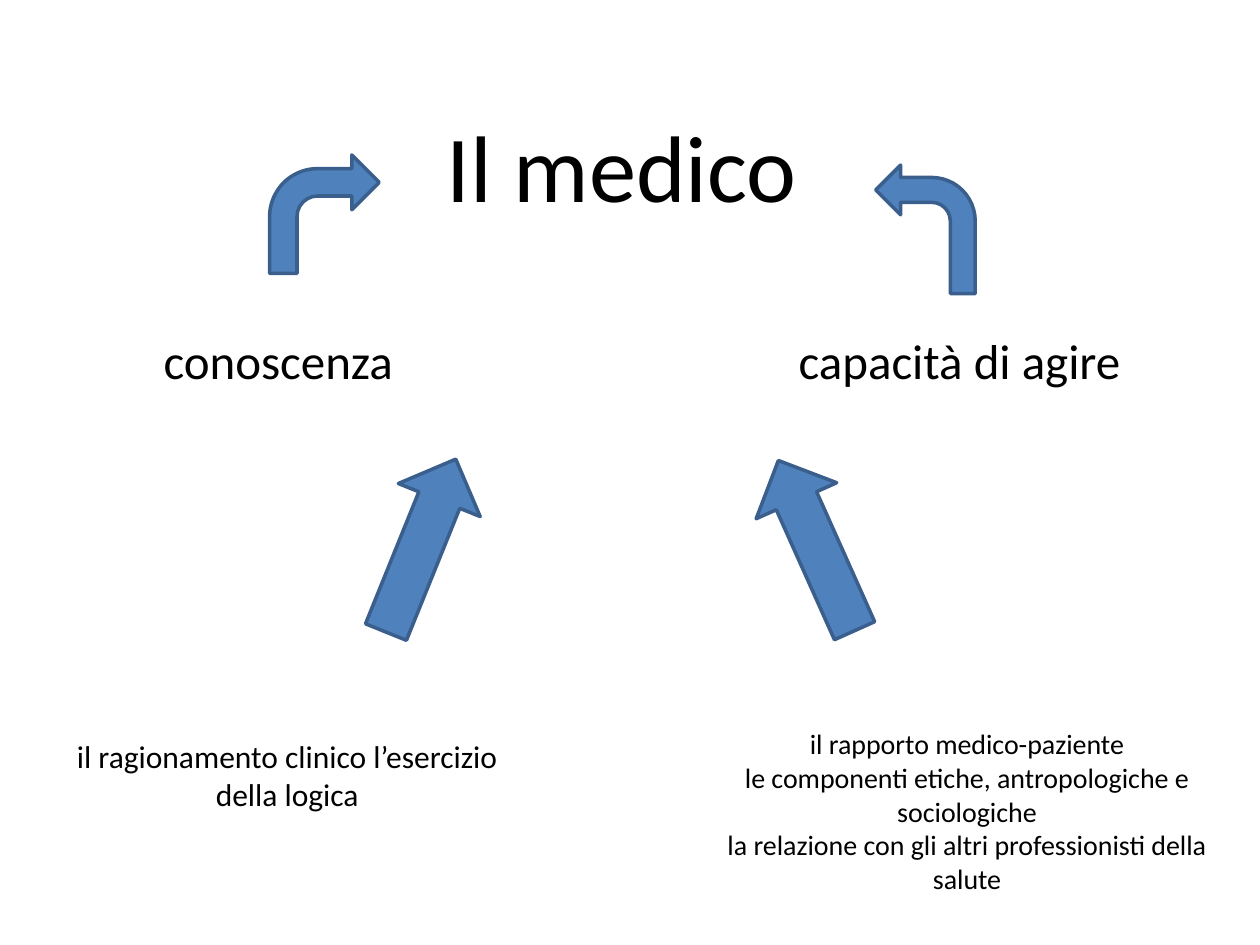
from pptx import Presentation
from pptx.dml.color import RGBColor
from pptx.enum.shapes import MSO_SHAPE as Shape
from pptx.enum.text import MSO_ANCHOR as Anchor, PP_ALIGN as Align
from pptx.util import Inches, Pt

COLORS = {"text": "000000", "arrow": "4F81BD", "outline": "3A5F8C"}

deck = Presentation()
deck.slide_width, deck.slide_height = Inches(10), Inches(7.5)
slide = deck.slides.add_slide(deck.slide_layouts[5])


def write(frame, lines, size, align):
    frame.word_wrap = True
    for index, line in enumerate(lines):
        paragraph = frame.paragraphs[0] if index == 0 else frame.add_paragraph()
        paragraph.alignment = align
        run = paragraph.add_run()
        run.text = line
        run.font.name = "Calibri"
        run.font.size = Pt(size)
        run.font.color.rgb = RGBColor.from_string(COLORS["text"])


medico = slide.shapes.title
medico.left, medico.top = Inches(3.24), Inches(0.68)
medico.width, medico.height = Inches(3.39), Inches(1.25)
medico.text_frame.vertical_anchor = Anchor.MIDDLE
write(medico.text_frame, ["Il medico"], 54, Align.CENTER)

texts = [
    (1.2, 2.57, 2.37, 0.55, 28, Align.LEFT, ["conoscenza"]),
    (6.24, 2.57, 3.09, 0.71, 28, Align.LEFT, ["capacità di agire"]),
    (0.43, 5.8, 3.7, 0.71, 18, Align.CENTER,
     ["il ragionamento clinico l’esercizio della logica"]),
    (5.39, 5.72, 4.57, 1.45, 16, Align.CENTER,
     ["il rapporto medico-paziente",
      "le componenti etiche, antropologiche e sociologiche",
      "la relazione con gli altri professionisti della salute"]),
]
for left, top, width, height, size, align, lines in texts:
    box = slide.shapes.add_textbox(
        Inches(left), Inches(top), Inches(width), Inches(height))
    write(box.text_frame, lines, size, align)

arrows = [
    (Shape.BENT_ARROW, 2.14, 1.23, 0.87, 0.94, 0, False),
    (Shape.BENT_ARROW, 6.95, 1.31, 0.79, 1.02, 0, True),
    (Shape.DOWN_ARROW, 6.13, 3.59, 0.7, 1.48, 155.9, False),
    (Shape.DOWN_ARROW, 2.99, 3.59, 0.7, 1.48, 202, False),
]
for kind, left, top, width, height, angle, mirrored in arrows:
    arrow = slide.shapes.add_shape(
        kind, Inches(left), Inches(top), Inches(width), Inches(height))
    arrow.rotation = angle
    arrow.shadow.inherit = False
    arrow.fill.solid()
    arrow.fill.fore_color.rgb = RGBColor.from_string(COLORS["arrow"])
    arrow.line.color.rgb = RGBColor.from_string(COLORS["outline"])
    arrow.line.width = Pt(2)
    if mirrored:
        arrow._element.spPr.xfrm.set("flipH", "1")

deck.save("out.pptx")
